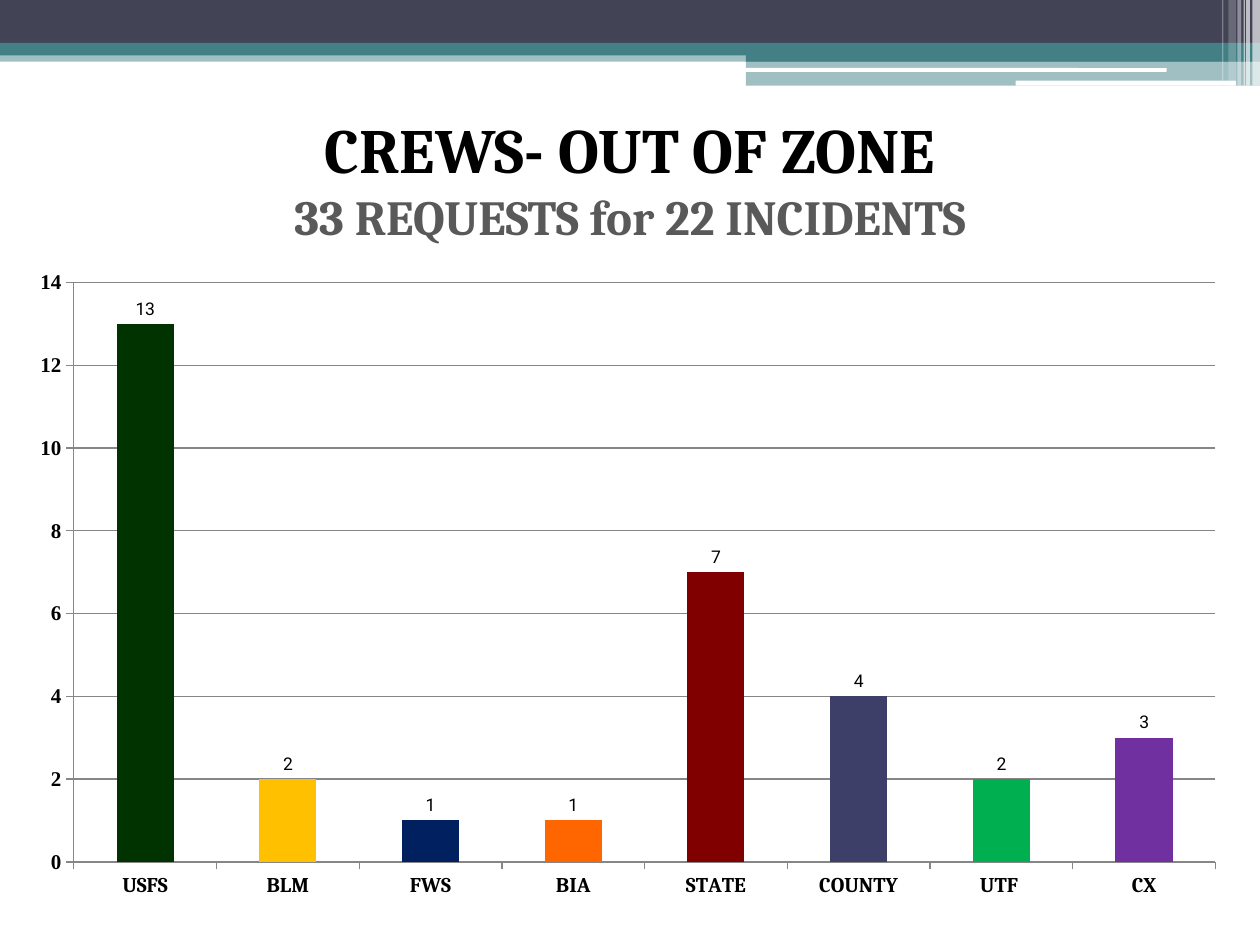
from lxml import etree
from pptx import Presentation, util as u
from pptx.chart.data import CategoryChartData
from pptx.dml.color import RGBColor
from pptx.enum import chart as c, shapes as s, text as t
from pptx.oxml import parse_xml
from pptx.oxml.ns import nsdecls, qn

COLORS = {
    "navy": "424456", "teal": "438086", "white": "FFFFFF", "black": "000000",
    "gray": "595959", "axis": "868686",
}
BARS = [
    ("USFS", 13, "003300"), ("BLM", 2, "FFC000"), ("FWS", 1, "002060"),
    ("BIA", 1, "FF6600"), ("STATE", 7, "800000"), ("COUNTY", 4, "3E3F68"),
    ("UTF ", 2, "00B050"), ("CX", 3, "7030A0"),
]

presentation = Presentation()
presentation.slide_width, presentation.slide_height = u.Inches(10), u.Inches(7.5)
slide = presentation.slides.add_slide(presentation.slide_layouts[6])
column = presentation.slide_width / 100
row = presentation.slide_height / 75


def place(left, top, width, height):
    return [int(left * column), int(top * row), int(width * column), int(height * row)]


def style_font(font, size, name, color, bold=False):
    font.size, font.name, font.bold = u.Pt(size), name, bold
    font.color.rgb = RGBColor.from_string(color)


bands = [
    ("RECTANGLE", 0, 4, 100, 0.9, "teal", 50),
    ("RECTANGLE", 0, 0, 100, 3.4, "navy", 100),
    ("RECTANGLE", 0, 3.4, 100, 1, "teal", 100),
    ("RECTANGLE", 59.2, 3.9, 40.8, 1, "teal", 100),
    ("RECTANGLE", 59.2, 4.85, 40.8, 1.95, "teal", 50),
    ("ROUNDED_RECTANGLE", 59.1, 5.4, 33.5, 0.3, "white", 100),
    ("ROUNDED_RECTANGLE", 80.6, 6.4, 17.5, 0.4, "white", 100),
]
stripes = [
    (99.4, 0.6, 6.8, 65), (98.9, 0.3, 6.8, 65), (98.7, 0.1, 6.8, 60),
    (98.2, 0.3, 6.8, 40), (97.5, 0.6, 6.4, 20), (97, 0.1, 6.4, 30),
]
bands += [("RECTANGLE", left, 0, width, height, "white", alpha)
          for left, width, height, alpha in stripes]
for kind, left, top, width, height, color, alpha in bands:
    shape = slide.shapes.add_shape(s.MSO_SHAPE[kind], *place(left, top, width, height))
    shape.shadow.inherit = False
    shape.line.fill.background()
    shape.fill.solid()
    shape.fill.fore_color.rgb = RGBColor.from_string(COLORS[color])
    if alpha < 100:
        fill_color = shape.fill._xPr.find(qn("a:solidFill"))[0]
        etree.SubElement(fill_color, qn("a:alpha"), val=str(alpha * 1000))

heading = slide.shapes.add_textbox(*place(0, 8.3, 100, 11.8))
frame = heading.text_frame
frame.word_wrap = True
frame.auto_size = t.MSO_AUTO_SIZE.SHAPE_TO_FIT_TEXT
lines = [("CREWS- OUT OF ZONE", 36, "black"), ("33 REQUESTS for 22 INCIDENTS", 28, "gray")]
for index, (words, size, color) in enumerate(lines):
    paragraph = frame.add_paragraph() if index else frame.paragraphs[0]
    paragraph.alignment = t.PP_ALIGN.CENTER
    run = paragraph.add_run()
    run.text = words
    style_font(run.font, size, "Cambria", COLORS[color], True)
    run.font._element.insert(0, parse_xml(
        f'<a:ln {nsdecls("a")} w="{u.Pt(0.75)}"><a:solidFill>'
        f'<a:srgbClr val="{COLORS["black"]}"/></a:solidFill></a:ln>'))

data = CategoryChartData()
data.categories = [name for name, value, color in BARS]
data.add_series("Series 1", [value for name, value, color in BARS])
chart = slide.shapes.add_chart(
    c.XL_CHART_TYPE.COLUMN_CLUSTERED, *place(1.7, 20.8, 96.7, 52.5), data).chart
chart.has_legend = chart.has_title = False
style_font(chart.font, 18, "Cambria", COLORS["black"])

plot = chart.plots[0]
plot.gap_width = 150
plot.vary_by_categories = False
series = plot.series[0]
for index, (name, value, color) in enumerate(BARS):
    fill = series.points[index].format.fill
    fill.solid()
    fill.fore_color.rgb = RGBColor.from_string(color)

labels = series.data_labels
labels.show_value = True
labels.position = c.XL_LABEL_POSITION.OUTSIDE_END
style_font(labels.font, 10, "Roboto", COLORS["black"])

value_axis = chart.value_axis
value_axis.minimum_scale, value_axis.maximum_scale, value_axis.major_unit = 0, 14, 2
value_axis.has_major_gridlines = True
for axis, font_name in [(chart.category_axis, "Cambria"), (value_axis, "Times New Roman")]:
    axis.major_tick_mark = c.XL_TICK_MARK.OUTSIDE
    style_font(axis.tick_labels.font, 12, font_name, COLORS["black"], True)
for line in [chart.category_axis.format.line, value_axis.format.line,
             value_axis.major_gridlines.format.line]:
    line.width = u.Pt(0.75)
    line.color.rgb = RGBColor.from_string(COLORS["axis"])

plot_area = chart._chartSpace.chart.plotArea
for layout in plot_area.findall(qn("c:layout")):
    plot_area.remove(layout)
edges = [("layoutTarget", "inner"), ("xMode", "edge"), ("yMode", "edge"),
         ("x", 0.043), ("y", 0.031), ("w", 0.937), ("h", 0.876)]
settings = "".join(f'<c:{tag} val="{value}"/>' for tag, value in edges)
plot_area.insert(0, parse_xml(
    f'<c:layout {nsdecls("c")}><c:manualLayout>{settings}</c:manualLayout></c:layout>'))

presentation.save("out.pptx")
